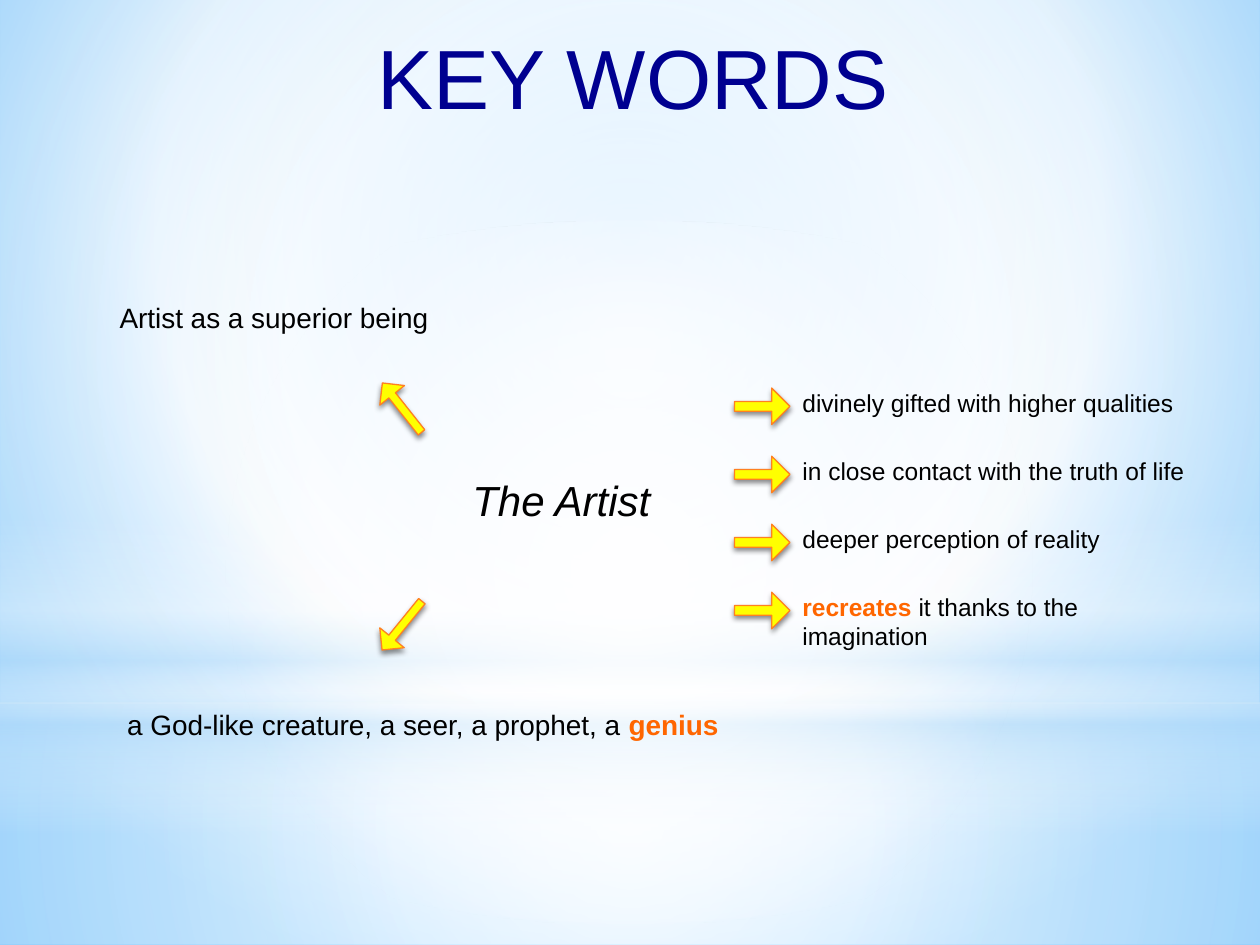
"""Builds the KEY WORDS slide about the artist."""
from lxml import etree
from pptx import Presentation
from pptx.dml.color import RGBColor
from pptx.enum.shapes import MSO_SHAPE as Preset
from pptx.enum.text import MSO_ANCHOR as Anchor, PP_ALIGN as Align
from pptx.oxml.ns import qn
from pptx.util import Pt

PX = 9144
NAVY = RGBColor(0x00, 0x00, 0x90)
BLACK = RGBColor(0x00, 0x00, 0x00)
ORANGE = RGBColor(0xFF, 0x66, 0x00)
YELLOW = RGBColor(0xFF, 0xFF, 0x00)
AMBER = RGBColor(0xFF, 0x80, 0x21)
WHITE = RGBColor(0xFF, 0xFF, 0xFF)
MIST = RGBColor(0xB4, 0xDC, 0xFA)
SKY = RGBColor(0x9E, 0xD5, 0xFF)
AZURE = RGBColor(0x5B, 0xB9, 0xFF)


def set_gradient(fill, element, stops, focus):
    """Fill with (position, colour, opacity) stops, radial if a focus is given."""
    fill.gradient()
    gradient = element.find(".//" + qn("a:gradFill"))
    for child in list(gradient):
        gradient.remove(child)
    stop_list = etree.SubElement(gradient, qn("a:gsLst"))
    for position, color, opacity in stops:
        stop = etree.SubElement(stop_list, qn("a:gs"), pos=str(position * 1000))
        tint = etree.SubElement(stop, qn("a:srgbClr"), val=str(color))
        etree.SubElement(tint, qn("a:alpha"), val=str(opacity * 1000))
    if focus:
        route = etree.SubElement(gradient, qn("a:path"), {"path": "circle"})
        sides = {side: str(value * 1000) for side, value in zip("ltrb", focus)}
        etree.SubElement(route, qn("a:fillToRect"), sides)
    else:
        etree.SubElement(gradient, qn("a:lin"), ang="5400000", scaled="0")


deck = Presentation()
deck.slide_width, deck.slide_height = 1000 * PX, 750 * PX
page = deck.slides.add_slide(deck.slide_layouts[5])
shapes = page.shapes

set_gradient(page.background.fill, page.element,
             [(0, SKY, 100), (60, WHITE, 100), (100, AZURE, 100)], (20, 10, 20, 60))

CENTER = (50, 50, 50, 50)
glows = [
    (Preset.RECTANGLE, 558, 192, CENTER,
     [(0, WHITE, 91), (37, WHITE, 76), (100, MIST, 79)]),
    (Preset.RECTANGLE, 0, 558, CENTER,
     [(0, WHITE, 89), (48, WHITE, 62), (100, MIST, 79)]),
    (Preset.RECTANGLE, 412, 250, None,
     [(0, WHITE, 0), (29, WHITE, 30), (45, MIST, 40),
      (55, WHITE, 26), (65, MIST, 60), (100, WHITE, 0)]),
    (Preset.OVAL, 175, 558, CENTER, [(0, WHITE, 100), (56, WHITE, 0)]),
]
for preset, top, height, focus, stops in glows:
    glow = shapes.add_shape(preset, 0, top * PX, 1000 * PX, height * PX)
    glow.shadow.inherit = False
    glow.line.fill.background()
    set_gradient(glow.fill, glow._element, stops, focus)

title = shapes.title
title._element.getparent().append(title._element)
title.left, title.top, title.width, title.height = 68 * PX, 15 * PX, 864 * PX, 111 * PX
frame = title.text_frame
frame.text = "KEY WORDS"
frame.vertical_anchor = Anchor.TOP
frame.margin_left, frame.margin_top = 15 * PX, 5 * PX
heading = frame.paragraphs[0]
heading.alignment = Align.CENTER
font = heading.runs[0].font
font.name, font.size, font.color.rgb = "Arial", Pt(48), NAVY

qualities = [
    [("divinely gifted with higher qualities", False)],
    [("in close contact with the truth of life", False)],
    [("deeper perception of reality", False)],
    [("recreates ", True), ("it thanks to the imagination", False)],
]
labels = [
    (365, 372, 175, 51, 24, [("The Artist", False)]),
    (85, 234, 279, 37, 16, [("Artist as a superior being", False)]),
    (91, 557, 555, 37, 16,
     [("a God-like creature, a seer, a prophet, a ", False), ("genius", True)]),
]
arrows = [(294, 311, 50, 25, 231.6), (294, 484, 50, 25, 129.2)]
for row, spans in enumerate(qualities):
    labels.append((627, 303 + 54 * row, 343, 34, 14, spans))
    arrows.append((583, 308 + 54 * row, 44, 29, 0))

for left, top, width, height, size, spans in labels:
    box = shapes.add_textbox(left * PX, top * PX, width * PX, height * PX)
    box.text_frame.word_wrap = True
    para = box.text_frame.paragraphs[0]
    for text, highlighted in spans:
        span = para.add_run()
        span.text = text
        font = span.font
        font.name, font.size, font.bold = "Arial", Pt(size), highlighted
        font.italic = text == "The Artist"
        font.color.rgb = ORANGE if highlighted else BLACK

for left, top, width, height, angle in arrows:
    arrow = shapes.add_shape(Preset.RIGHT_ARROW, left * PX, top * PX, width * PX, height * PX)
    arrow.rotation = angle
    arrow.adjustments[0] = 0.265
    arrow.fill.solid()
    arrow.fill.fore_color.rgb = YELLOW
    arrow.line.color.rgb = AMBER
    arrow.line.width = Pt(0.75)
    arrow.shadow.inherit = False
    effects = arrow._element.spPr.find(qn("a:effectLst"))
    shadow = etree.SubElement(effects, qn("a:outerShdw"), blurRad=str(Pt(3.1)),
                              dist=str(Pt(1.8)), dir="5400000", rotWithShape="0")
    shade = etree.SubElement(shadow, qn("a:srgbClr"), val=str(BLACK))
    etree.SubElement(shade, qn("a:alpha"), val="45000")

deck.save("out.pptx")
